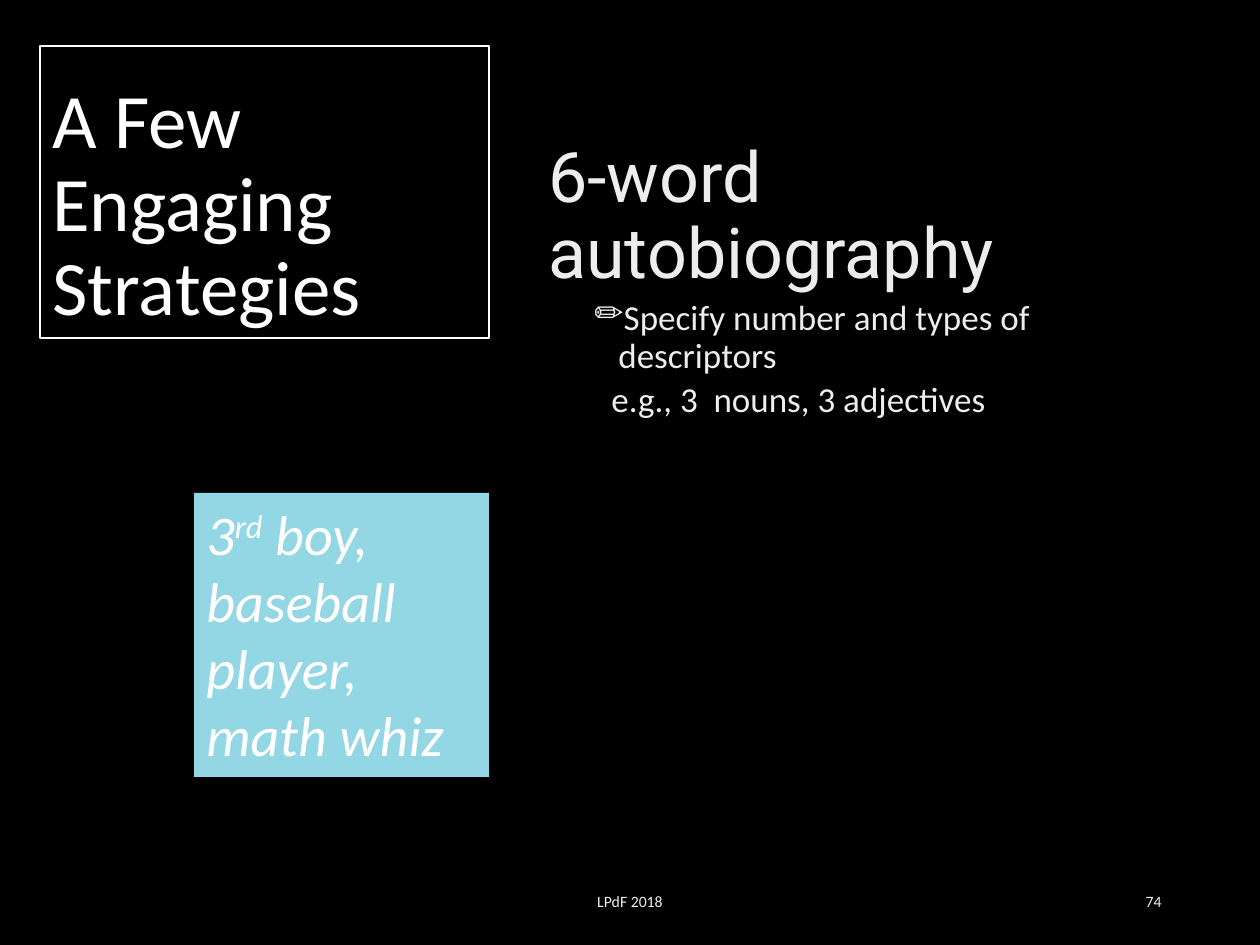
"""Build the slide on the 6-word autobiography strategy."""
from lxml import etree
from pptx import Presentation, util as u
from pptx.dml.color import RGBColor
from pptx.enum import shapes, text
from pptx.oxml.ns import qn

BLACK = RGBColor(0, 0, 0)
WHITE = RGBColor(255, 255, 255)
PALE = RGBColor(0xED, 0xED, 0xED)
AQUA = RGBColor(0x94, 0xD7, 0xE4)
LEFT, MID, RIGHT = text.PP_ALIGN.LEFT, text.PP_ALIGN.CENTER, text.PP_ALIGN.RIGHT
PX = 914400 / 126


def px(*vals):
    return [u.Emu(round(val * PX)) for val in vals]


def style(para, size, tint, face="Calibri", align=LEFT):
    para.alignment = align
    for run in para.runs:
        run.font.size = u.Pt(size)
        run.font.name = face
        run.font.color.rgb = tint


deck = Presentation()
deck.slide_width, deck.slide_height = px(1260, 945)
slide = deck.slides.add_slide(deck.slide_layouts[6])
slide.background.fill.solid()
slide.background.fill.fore_color.rgb = BLACK

title = slide.shapes.add_shape(shapes.MSO_SHAPE.RECTANGLE, *px(40, 46, 449, 292))
title.shadow.inherit = False
title.fill.solid()
title.fill.fore_color.rgb = BLACK
title.line.color.rgb = WHITE
title.line.width = u.Pt(1.5)
frame = title.text_frame
frame.word_wrap = True
frame.vertical_anchor = text.MSO_ANCHOR.BOTTOM
frame.text = "A Few Engaging Strategies"
frame.paragraphs[0].line_spacing = 0.9
style(frame.paragraphs[0], 44, WHITE)

body = slide.shapes.add_textbox(*px(536, 136, 638, 672)).text_frame
body.word_wrap = True
body.text = "6-word autobiography\nSpecify number and types of descriptors\ne.g., 3  nouns, 3 adjectives"
head, point, sample = body.paragraphs
for para, left, hang in ((point, 70, -24), (sample, 63, 0)):
    props = para._p.get_or_add_pPr()
    props.set("lvl", "1")
    props.set("marL", str(px(left)[0]))
    props.set("indent", str(px(hang)[0]))
    if hang:
        etree.SubElement(props, qn("a:buChar")).set("char", "✏")
    para.space_before = u.Pt(3.8)
    style(para, 20, PALE)
style(head, 40, PALE, "Roboto")
for para in body.paragraphs:
    para.line_spacing = 0.9

for label, left, width, align in (("LPdF 2018", 417, 426, MID), ("74", 890, 284, RIGHT)):
    frame = slide.shapes.add_textbox(*px(left, 876, width, 50)).text_frame
    frame.word_wrap = True
    frame.vertical_anchor = text.MSO_ANCHOR.MIDDLE
    frame.text = label
    style(frame.paragraphs[0], 9, PALE, align=align)

note = slide.shapes.add_shape(shapes.MSO_SHAPE.RECTANGLE, *px(194, 493, 295, 284))
note.shadow.inherit = False
note.fill.solid()
note.fill.fore_color.rgb = AQUA
note.line.fill.background()
frame = note.text_frame
frame.word_wrap = True
frame.vertical_anchor = text.MSO_ANCHOR.TOP
para = frame.paragraphs[0]
for part, base in (("3", 0), ("rd", 30000), (" boy, baseball player, math whiz", 0)):
    run = para.add_run()
    run.text = part
    run.font.italic = True
    if base:
        run._r.get_or_add_rPr().set("baseline", str(base))
style(para, 32, WHITE)

deck.save("out.pptx")
